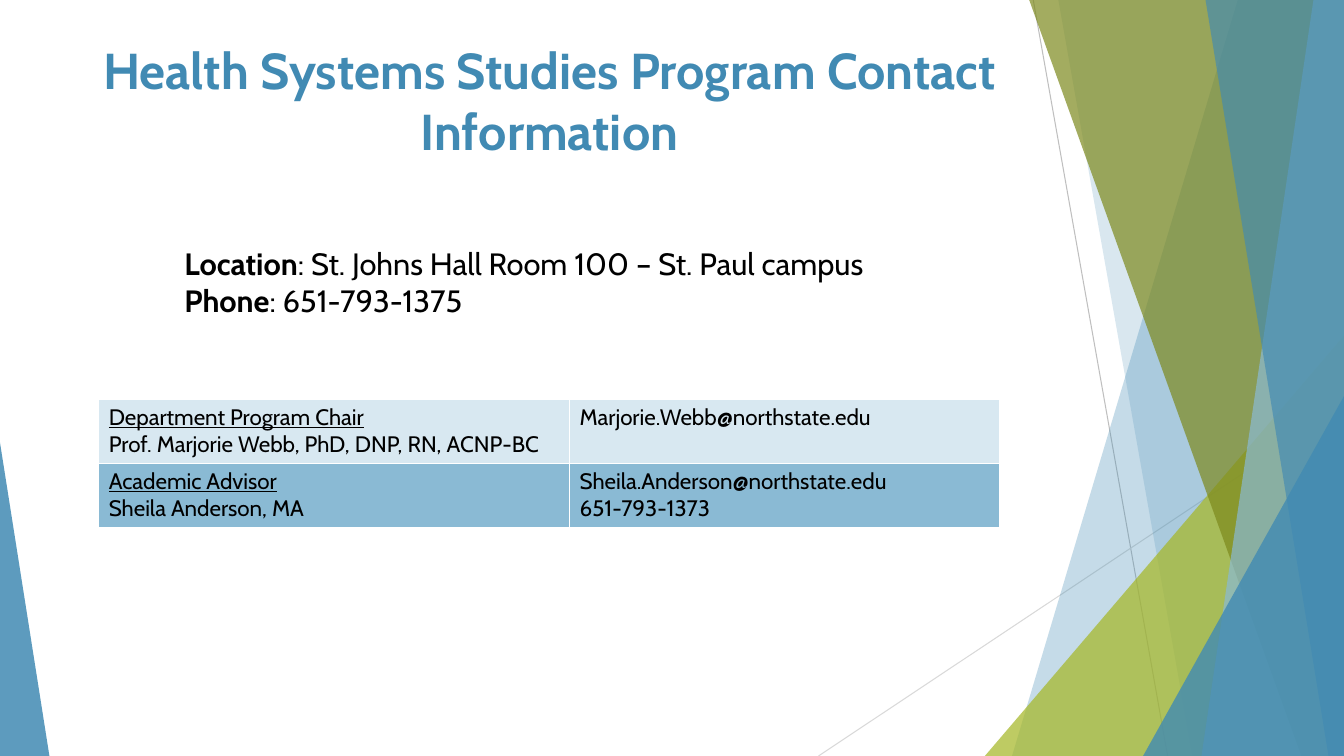
from dataclasses import dataclass

from lxml.etree import SubElement
from pptx import Presentation
from pptx.dml.color import RGBColor
from pptx.enum.shapes import MSO_CONNECTOR, MSO_SHAPE
from pptx.enum.text import MSO_ANCHOR, PP_ALIGN
from pptx.oxml import parse_xml
from pptx.oxml.ns import nsdecls, qn
from pptx.util import Emu, Inches, Pt

WIDTH, HEIGHT = Inches(13.333), Inches(7.5)
FONT = "Cabin"
COLORS = {
    "blue": "418AB3",
    "sky": "8ABAD4",
    "pale": "D8E8F1",
    "lime": "A6B727",
    "olive": "7D891D",
    "gray": "BFBFBF",
    "silver": "D9D9D9",
    "black": "000000",
    "white": "FFFFFF",
}


@dataclass
class Ray:
    start: tuple[float, float]
    end: tuple[float, float]
    color: str


@dataclass
class Band:
    top_left: float
    bottom_left: float
    color: str
    opacity: int


@dataclass
class Wedge:
    left: float
    top: float
    width: float
    tip: float
    color: str
    opacity: int


@dataclass
class Span:
    text: str
    bold: bool = False
    underline: bool = False


Lines = list[list[Span]]

RAYS = [
    Ray((76.88, 0), (86.88, 100), "gray"),
    Ray((100, 53.73), (60.9, 100), "silver"),
]
FACETS = [
    Band(92.1, 75.3, "blue", 30),
    Band(78.75, 88.73, "blue", 20),
    Wedge(73.28, 44.4, 26.72, 1, "lime", 72),
    Band(76.58, 96.83, "olive", 70),
    Band(97.73, 89.4, "sky", 70),
    Band(89.7, 98.85, "blue", 65),
    Wedge(85.05, 52.4, 14.95, 1, "blue", 80),
    Wedge(0, 58.53, 3.68, 0, "blue", 85),
]
TITLE = [[Span("Health Systems Studies Program Contact Information", bold=True)]]
OFFICE = [
    [Span("Location", bold=True), Span(": St. Johns Hall Room 100 – St. Paul campus")],
    [Span("Phone", bold=True), Span(": 651-793-1375")],
]
CONTACTS = [
    [
        [[Span("Department Program Chair", underline=True)],
         [Span("Prof. Marjorie Webb, PhD, DNP, RN, ACNP-BC")]],
        [[Span("Marjorie.Webb@northstate.edu")]],
    ],
    [
        [[Span("Academic Advisor", underline=True)], [Span("Sheila Anderson, MA")]],
        [[Span("Sheila.Anderson@northstate.edu")], [Span("651-793-1373")]],
    ],
]
ROW_FILLS = ["pale", "sky"]
COLUMN_SHARES = [35.03, 32.03]
ROW_SHARE = 8.47


def across(share: float) -> Emu:
    return Emu(round(WIDTH * share / 100))


def down(share: float) -> Emu:
    return Emu(round(HEIGHT * share / 100))


def rgb(name: str) -> RGBColor:
    return RGBColor.from_string(COLORS[name])


def draw_ray(page, ray: Ray) -> None:
    line = page.shapes.add_connector(
        MSO_CONNECTOR.STRAIGHT,
        across(ray.start[0]), down(ray.start[1]),
        across(ray.end[0]), down(ray.end[1]),
    )
    line.line.color.rgb = rgb(ray.color)
    line.line.width = Pt(0.75)
    SubElement(line._element.spPr, qn("a:effectLst"))


def draw_facet(page, facet: Band | Wedge) -> None:
    if isinstance(facet, Band):
        builder = page.shapes.build_freeform(across(facet.top_left), 0)
        builder.add_line_segments(
            [(WIDTH, 0), (WIDTH, HEIGHT), (across(facet.bottom_left), HEIGHT)]
        )
        shape = builder.convert_to_shape()
    else:
        shape = page.shapes.add_shape(
            MSO_SHAPE.ISOSCELES_TRIANGLE,
            across(facet.left), down(facet.top),
            across(facet.width), down(100 - facet.top),
        )
        shape.adjustments[0] = facet.tip
    shape.shadow.inherit = False
    shape.line.fill.background()
    shape.fill.solid()
    shape.fill.fore_color.rgb = rgb(facet.color)
    tint = shape._element.spPr.find(qn("a:solidFill"))[0]
    SubElement(tint, qn("a:alpha"), val=str(facet.opacity * 1000))


def write_lines(frame, lines: Lines, size: int, color: str = "black",
                align: PP_ALIGN = PP_ALIGN.LEFT) -> None:
    frame.word_wrap = True
    for index, spans in enumerate(lines):
        para = frame.add_paragraph() if index else frame.paragraphs[0]
        para.alignment = align
        para.font.name = FONT
        para.font.size = Pt(size)
        para.font.color.rgb = rgb(color)
        for span in spans:
            run = para.add_run()
            run.text = span.text
            run.font.bold = span.bold
            run.font.underline = span.underline


def add_box(page, left: float, top: float, width: float, height: float):
    box = page.shapes.add_textbox(across(left), down(top), across(width), down(height))
    return box.text_frame


def border_cell(cell) -> None:
    properties = cell._tc.get_or_add_tcPr()
    for index, side in enumerate(("lnL", "lnR", "lnT", "lnB")):
        properties.insert(index, parse_xml(
            f'<a:{side} {nsdecls("a")} w="{Pt(1)}"><a:solidFill>'
            f'<a:srgbClr val="{COLORS["white"]}"/></a:solidFill></a:{side}>'
        ))


def draw_contacts(page) -> None:
    table = page.shapes.add_table(
        len(CONTACTS), len(COLUMN_SHARES), across(7.35), down(52.8),
        across(sum(COLUMN_SHARES)), down(ROW_SHARE * len(CONTACTS)),
    ).table
    table.first_row = table.horz_banding = False
    for column, share in zip(table.columns, COLUMN_SHARES):
        column.width = across(share)
    for row, entries, color in zip(table.rows, CONTACTS, ROW_FILLS):
        row.height = down(ROW_SHARE)
        for cell, lines in zip(row.cells, entries):
            cell.fill.solid()
            cell.fill.fore_color.rgb = rgb(color)
            border_cell(cell)
            write_lines(cell.text_frame, lines, 16)


def main() -> None:
    deck = Presentation()
    deck.slide_width, deck.slide_height = WIDTH, HEIGHT
    page = deck.slides.add_slide(deck.slide_layouts[6])
    for ray in RAYS:
        draw_ray(page, ray)
    for facet in FACETS:
        draw_facet(page, facet)
    title = add_box(page, 5.63, 4.53, 70.5, 19.2)
    title.vertical_anchor = MSO_ANCHOR.TOP
    write_lines(title, TITLE, 36, "blue", PP_ALIGN.CENTER)
    write_lines(add_box(page, 12.98, 31.73, 55.8, 11.2), OFFICE, 22)
    draw_contacts(page)
    deck.save("out.pptx")


if __name__ == "__main__":
    main()
